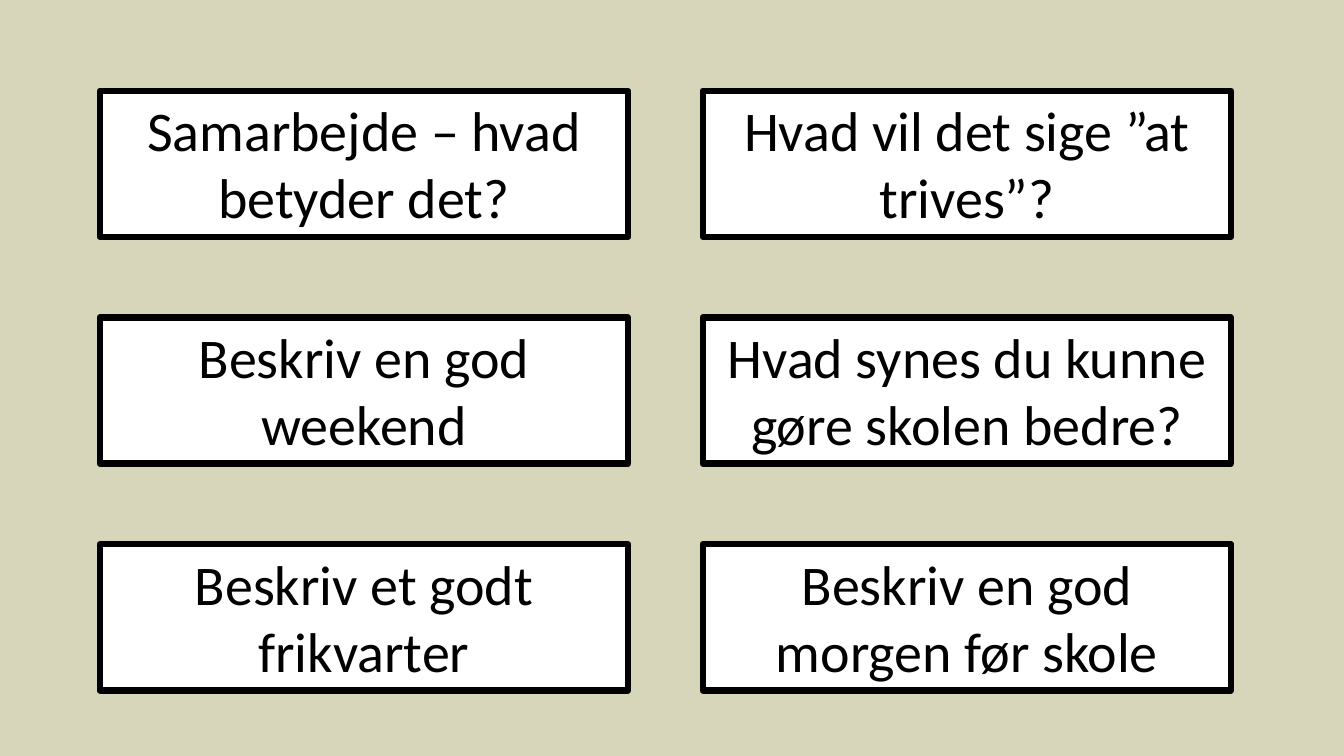
from dataclasses import dataclass

from pptx import Presentation
from pptx.dml.color import RGBColor
from pptx.enum.text import MSO_AUTO_SIZE as AutoSize, PP_ALIGN as Align
from pptx.slide import Slide
from pptx.util import Inches, Pt

# Card grid, in inches
COLS = 2
LEFT, TOP = 0.99, 0.9
STEP_X, STEP_Y = 5.98, 2.25
CARD_W, CARD_H = 5.24, 1.45

QUESTIONS = [
    "Samarbejde – hvad betyder det?",
    "Hvad vil det sige ”at trives”?",
    "Beskriv en god weekend",
    "Hvad synes du kunne gøre skolen bedre?",
    "Beskriv et godt frikvarter",
    "Beskriv en god morgen før skole",
]


@dataclass
class Card:
    text: str
    x: float
    y: float


def paint(color_format, color: str) -> None:
    color_format.rgb = RGBColor.from_string(color)


def add_card(s: Slide, card: Card) -> None:
    sp = s.shapes.add_textbox(
        Inches(card.x), Inches(card.y), Inches(CARD_W), Inches(CARD_H))
    sp.fill.solid()
    paint(sp.fill.fore_color, "FFFFFF")
    paint(sp.line.color, "000000")
    sp.line.width = Pt(4.5)

    tf = sp.text_frame
    tf.word_wrap = True
    tf.auto_size = AutoSize.SHAPE_TO_FIT_TEXT
    p = tf.paragraphs[0]
    p.text = card.text
    p.alignment = Align.CENTER
    p.font.name = "Calibri"
    p.font.size = Pt(40)
    paint(p.font.color, "000000")


def main() -> None:
    prs = Presentation()
    prs.slide_width, prs.slide_height = Inches(13.33), Inches(7.5)
    s = prs.slides.add_slide(prs.slide_layouts[6])

    # Background
    bg = s.background.fill
    bg.solid()
    paint(bg.fore_color, "D8D6BA")

    # Question cards, row by row
    for i, text in enumerate(QUESTIONS):
        row, col = divmod(i, COLS)
        add_card(s, Card(text, LEFT + col * STEP_X, TOP + row * STEP_Y))

    prs.save("out.pptx")


if __name__ == "__main__":
    main()
